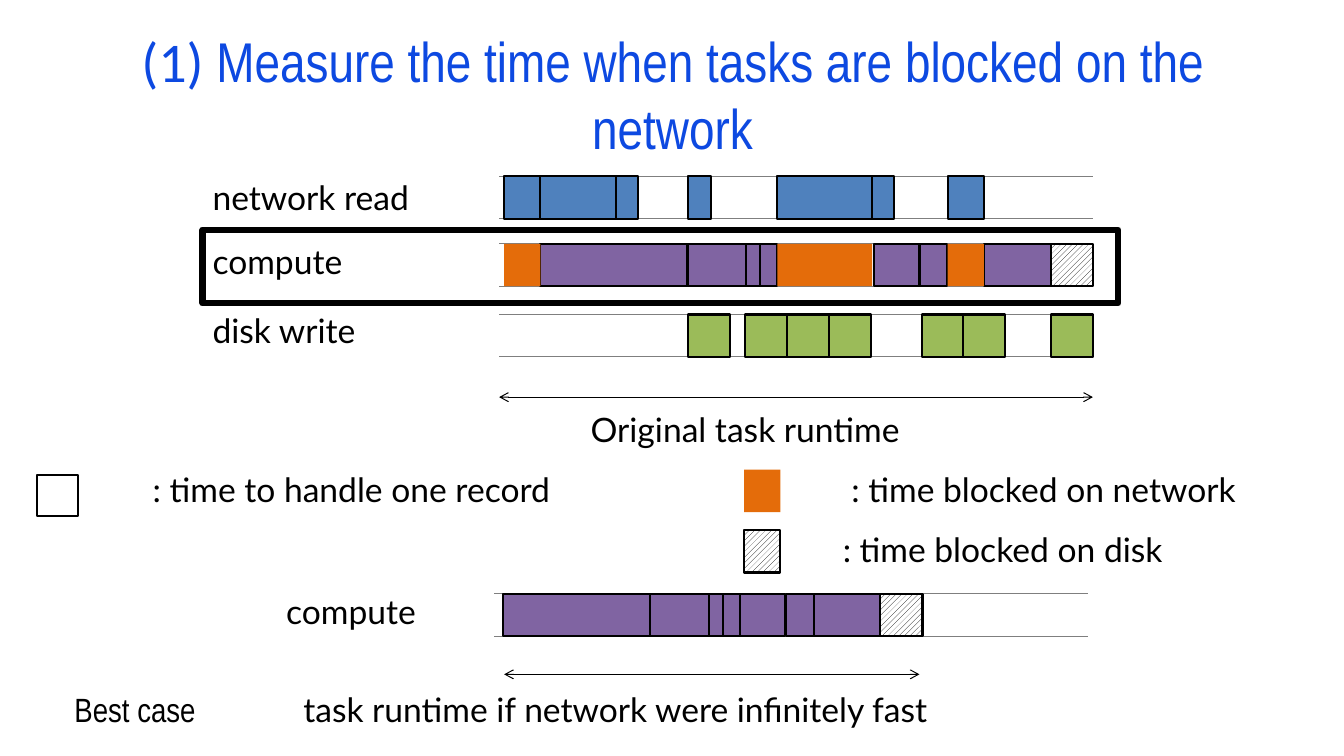
"""Build the slide on time that tasks spend blocked on the network."""
from lxml import etree
from pptx import Presentation
from pptx.dml.color import RGBColor
from pptx.enum.dml import MSO_PATTERN
from pptx.enum.shapes import MSO_CONNECTOR, MSO_SHAPE
from pptx.enum.text import MSO_ANCHOR, MSO_AUTO_SIZE, PP_ALIGN
from pptx.oxml.ns import qn
from pptx.util import Pt

RECT = MSO_SHAPE.RECTANGLE
LINE = MSO_CONNECTOR.STRAIGHT
HATCH = MSO_PATTERN.WIDE_UPWARD_DIAGONAL
MIDDLE = MSO_ANCHOR.MIDDLE
NOFIT = MSO_AUTO_SIZE.NONE
LEFT, CENTER = PP_ALIGN.LEFT, PP_ALIGN.CENTER

BLACK = RGBColor(0x00, 0x00, 0x00)
WHITE = RGBColor(0xFF, 0xFF, 0xFF)
GRAY = RGBColor(0x7F, 0x7F, 0x7F)
TITLE = RGBColor(0x0D, 0x49, 0xE1)
BLUE = RGBColor(0x4F, 0x81, 0xBD)
PURPLE = RGBColor(0x80, 0x64, 0xA2)
GREEN = RGBColor(0x9B, 0xBB, 0x59)
ORANGE = RGBColor(0xE4, 0x6C, 0x0A)

PX = 9144
BAR = 42
NET, COMP, DISK, BEST = 175, 242, 312, 589

HEAD = [
    ("(1) ", "Calibri"),
    ("Measure the time when tasks are blocked on the network", "Arial Narrow"),
]
HEADBOX = (67, 30, 1200, 125)
RAILS = [(NET, 495), (COMP, 495), (DISK, 495), (BEST, 490)]
SPAN = 589
TASKS = [
    (NET, BLUE, [(500, 36), (536, 75), (611, 22), (682, 23),
                 (771, 94), (865, 22), (940, 36)]),
    (COMP, PURPLE, [(536, 146), (682, 58), (740, 17), (754, 17),
                    (867, 45), (912, 27), (976, 67)]),
    (DISK, GREEN, [(682, 42), (739, 42), (781, 42), (822, 42),
                   (914, 42), (955, 42), (1042, 42)]),
    (BEST, PURPLE, [(499, 146), (645, 58), (703, 17), (717, 17),
                    (734, 45), (780, 27), (807, 67)]),
]
FRAME = (201, 228, 908, 73)
NETWAITS = [(500, COMP, 36), (771, COMP, 94), (940, COMP, 36), (738, 466, 36)]
DISKWAITS = [(1042, COMP, 42), (873, BEST, 42), (738, 526, 36)]
RECORD = (37, 471, 40, 41)
ARROWS = [(495, 1084, 394), (500, 912, 669)]
LABELS = [
    ("network read", (201, 154, 294, 82), LEFT, "Lato"),
    ("compute", (201, 218, 216, 82), LEFT, "Lato"),
    ("disk write", (201, 286, 216, 82), LEFT, "Lato"),
    ("Original task runtime", (576, 394, 444, 64), LEFT, "Lato"),
    (": time blocked on network", (764, 458, 542, 55), CENTER, "Lato"),
    (": time blocked on disk", (758, 517, 473, 55), CENTER, "Lato"),
    (": time to handle one record", (73, 445, 551, 81), CENTER, "Lato"),
    ("compute", (274, 565, 216, 82), LEFT, "Lato"),
    ("task runtime if network were infinitely fast",
     (291, 671, 827, 64), LEFT, "Lato"),
    ("Best case", (64, 671, 249, 64), LEFT, "Arial Narrow"),
]


def scale(box):
    return [n * PX for n in box]


def write(frame, runs, size, color, align):
    frame.word_wrap = True
    frame.auto_size = NOFIT
    frame.vertical_anchor = MIDDLE
    para = frame.paragraphs[0]
    para.alignment = align
    for text, face in runs:
        run = para.add_run()
        run.text = text
        run.font.name = face
        run.font.size = Pt(size)
        run.font.color.rgb = color


def block(slide, box, fill=None, width=1.5):
    shape = slide.shapes.add_shape(RECT, *scale(box))
    shape.shadow.inherit = False
    if fill is HATCH:
        shape.fill.patterned()
        shape.fill.pattern = HATCH
        shape.fill.fore_color.rgb = BLACK
        shape.fill.back_color.rgb = WHITE
    elif fill is None:
        shape.fill.background()
    else:
        shape.fill.solid()
        shape.fill.fore_color.rgb = fill
    if width:
        shape.line.color.rgb = BLACK
        shape.line.width = Pt(width)
    else:
        shape.line.fill.background()


def rule(slide, left, right, y, color, heads=False):
    line = slide.shapes.add_connector(LINE, *scale((left, y, right, y)))
    line.line.color.rgb = color
    line.line.width = Pt(0.75)
    props = line._element.spPr
    if heads:
        for tag in ("a:headEnd", "a:tailEnd"):
            etree.SubElement(props.find(qn("a:ln")), qn(tag), type="arrow")
    etree.SubElement(props, qn("a:effectLst"))


def main():
    deck = Presentation()
    deck.slide_width, deck.slide_height = scale((1333, 750))
    slide = deck.slides.add_slide(deck.slide_layouts[5])

    title = slide.shapes.title
    title.left, title.top, title.width, title.height = scale(HEADBOX)
    frame = title.text_frame
    frame.margin_left = frame.margin_right = 12 * PX
    frame.margin_top = frame.margin_bottom = 6 * PX
    write(frame, HEAD, 40, TITLE, CENTER)

    for top, left in RAILS:
        for y in (top, top + BAR):
            rule(slide, left, left + SPAN, y, GRAY)
    for top, fill, spans in TASKS:
        for left, width in spans:
            block(slide, (left, top, width, BAR), fill)
    block(slide, FRAME, width=4.5)
    for left, top, width in NETWAITS:
        block(slide, (left, top, width, BAR), ORANGE, 0)
    for left, top, width in DISKWAITS:
        block(slide, (left, top, width, BAR), HATCH)
    block(slide, RECORD)
    for left, right, y in ARROWS:
        rule(slide, left, right, y, BLACK, True)
    for text, box, align, face in LABELS:
        label = slide.shapes.add_textbox(*scale(box))
        write(label.text_frame, [(text, face)], 24, BLACK, align)

    deck.save("out.pptx")


if __name__ == "__main__":
    main()
